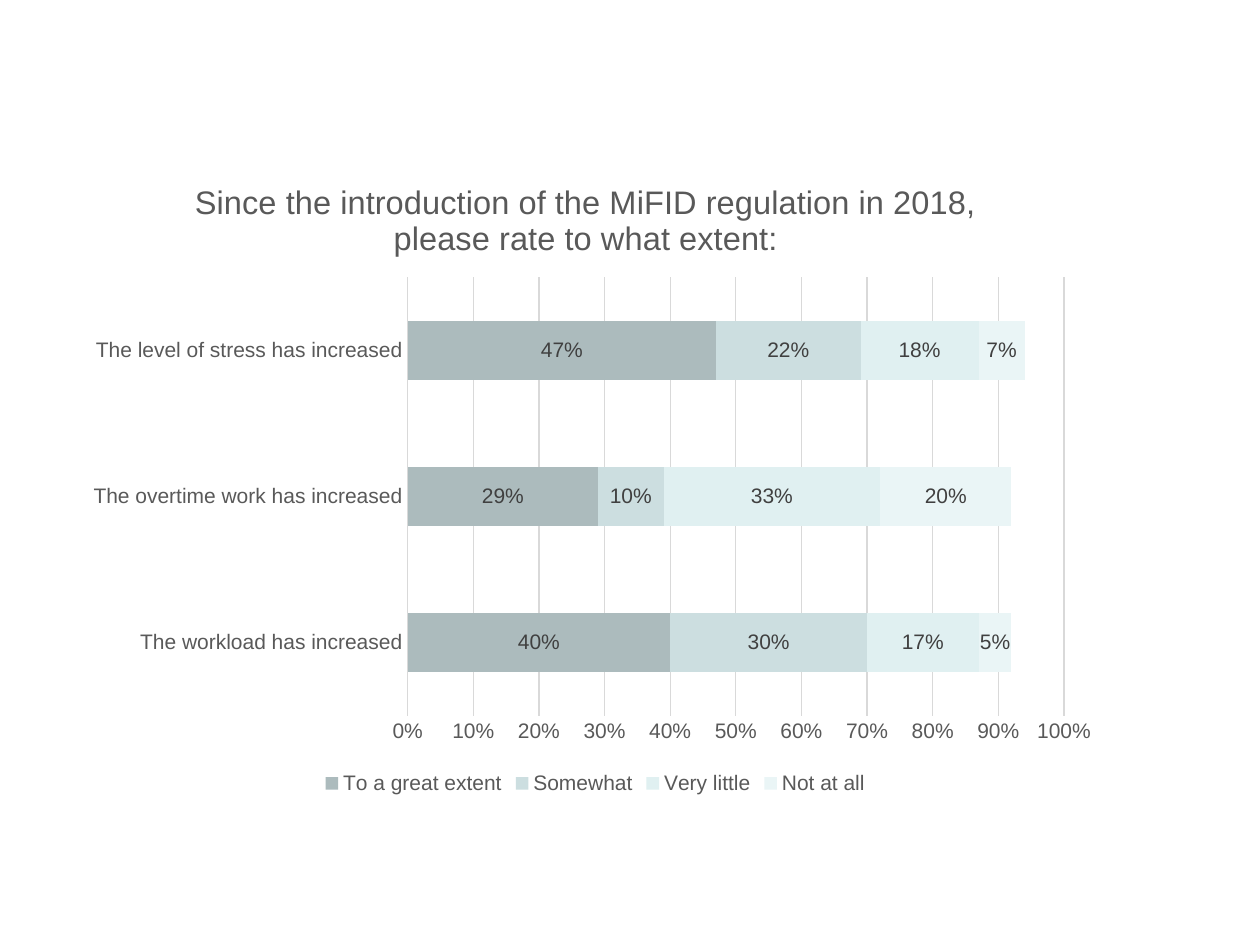
from dataclasses import dataclass

import pptx
import pptx.chart.chart
import pptx.chart.data
import pptx.dml.color
import pptx.enum.chart
import pptx.oxml
import pptx.oxml.ns
import pptx.util
from pptx.util import Cm


@dataclass(frozen=True)
class Theme:
    font: str = "Arial"
    title_size: float = 18.6
    text_size: float = 12
    text: str = "595959"
    label: str = "404040"
    line: str = "D9D9D9"
    line_width: float = 0.75


@dataclass(frozen=True)
class Answer:
    name: str
    shares: tuple[float, ...]
    color: str


THEME = Theme()
TITLE = ("Since the introduction of the MiFID regulation in 2018, "
         "please rate to what extent:")
STATEMENTS = ("The workload has increased", "The overtime work has increased",
              "The level of stress has increased")
ANSWERS = (
    Answer("To a great extent", (0.40, 0.29, 0.47), "ACBBBD"),
    Answer("Somewhat", (0.30, 0.10, 0.22), "CCDEE0"),
    Answer("Very little", (0.17, 0.33, 0.18), "E0F0F1"),
    Answer("Not at all", (0.05, 0.20, 0.07), "EAF5F6"),
)


def rgb(color: str) -> pptx.dml.color.RGBColor:
    return pptx.dml.color.RGBColor.from_string(color)


def format_font(font, color: str, size: float = THEME.text_size) -> None:
    font.name = THEME.font
    font.size = pptx.util.Pt(size)
    font.bold = False
    font.color.rgb = rgb(color)


def format_line(line) -> None:
    line.color.rgb = rgb(THEME.line)
    line.width = pptx.util.Pt(THEME.line_width)


def place(parent, index: int, **fractions: float) -> None:
    """Fix a chart part at fractions of the chart's size."""
    for layout in parent.findall(pptx.oxml.ns.qn("c:layout")):
        parent.remove(layout)
    target = '<c:layoutTarget val="inner"/>' if "w" in fractions else ""
    modes = "".join(f'<c:{key}Mode val="edge"/>' for key in ("x", "y"))
    values = "".join(f'<c:{key} val="{value}"/>' for key, value in fractions.items())
    parent.insert(index, pptx.oxml.parse_xml(
        f'<c:layout {pptx.oxml.ns.nsdecls("c")}><c:manualLayout>'
        f"{target}{modes}{values}</c:manualLayout></c:layout>"))


def format_title(chart: pptx.chart.chart.Chart) -> None:
    title = chart.chart_title
    title.text_frame.text = TITLE
    format_font(title.text_frame.paragraphs[0].font, THEME.text, THEME.title_size)
    title.include_in_layout = False
    place(title._element, 1, x=0.11, y=0.03)


def format_axes(chart: pptx.chart.chart.Chart) -> None:
    for axis in (chart.category_axis, chart.value_axis):
        axis.major_tick_mark = pptx.enum.chart.XL_TICK_MARK.NONE
        axis.minor_tick_mark = pptx.enum.chart.XL_TICK_MARK.NONE
        format_font(axis.tick_labels.font, THEME.text)
    format_line(chart.category_axis.format.line)

    scale = chart.value_axis
    scale.minimum_scale, scale.maximum_scale, scale.major_unit = 0, 1, 0.1
    scale.tick_labels.number_format = "0%"
    scale.tick_labels.number_format_is_linked = False
    scale.format.line.fill.background()
    format_line(scale.major_gridlines.format.line)


def format_bars(chart: pptx.chart.chart.Chart) -> None:
    plot = chart.plots[0]
    plot.gap_width, plot.overlap = 150, 100
    plot.vary_by_categories = False
    for series, answer in zip(plot.series, ANSWERS):
        series.format.fill.solid()
        series.format.fill.fore_color.rgb = rgb(answer.color)
        labels = series.data_labels
        labels.show_value = True
        labels.number_format = "0%"
        labels.number_format_is_linked = False
        labels.position = pptx.enum.chart.XL_LABEL_POSITION.CENTER
        format_font(labels.font, THEME.label)


def add_survey_chart(slide) -> None:
    data = pptx.chart.data.CategoryChartData(number_format="0%")
    data.categories = STATEMENTS
    for answer in ANSWERS:
        data.add_series(answer.name, answer.shares)
    chart = slide.shapes.add_chart(
        pptx.enum.chart.XL_CHART_TYPE.BAR_STACKED,
        Cm(1.5), Cm(3.12), Cm(21), Cm(13), data).chart
    format_font(chart.font, "000000", 10)
    format_title(chart)
    format_axes(chart)
    format_bars(chart)

    # Legend below the bars
    chart.has_legend = True
    chart.legend.position = pptx.enum.chart.XL_LEGEND_POSITION.BOTTOM
    chart.legend.include_in_layout = False
    format_font(chart.legend.font, THEME.text)

    # Plot area leaves room for the statements on the left
    plot_area = chart.element.find(".//" + pptx.oxml.ns.qn("c:plotArea"))
    place(plot_area, 0, x=0.32, y=0.19, w=0.63, h=0.68)


def main() -> None:
    presentation = pptx.Presentation()
    presentation.slide_width, presentation.slide_height = Cm(25.4), Cm(19.05)
    slide = presentation.slides.add_slide(presentation.slide_layouts[6])
    add_survey_chart(slide)
    presentation.save("out.pptx")


if __name__ == "__main__":
    main()
